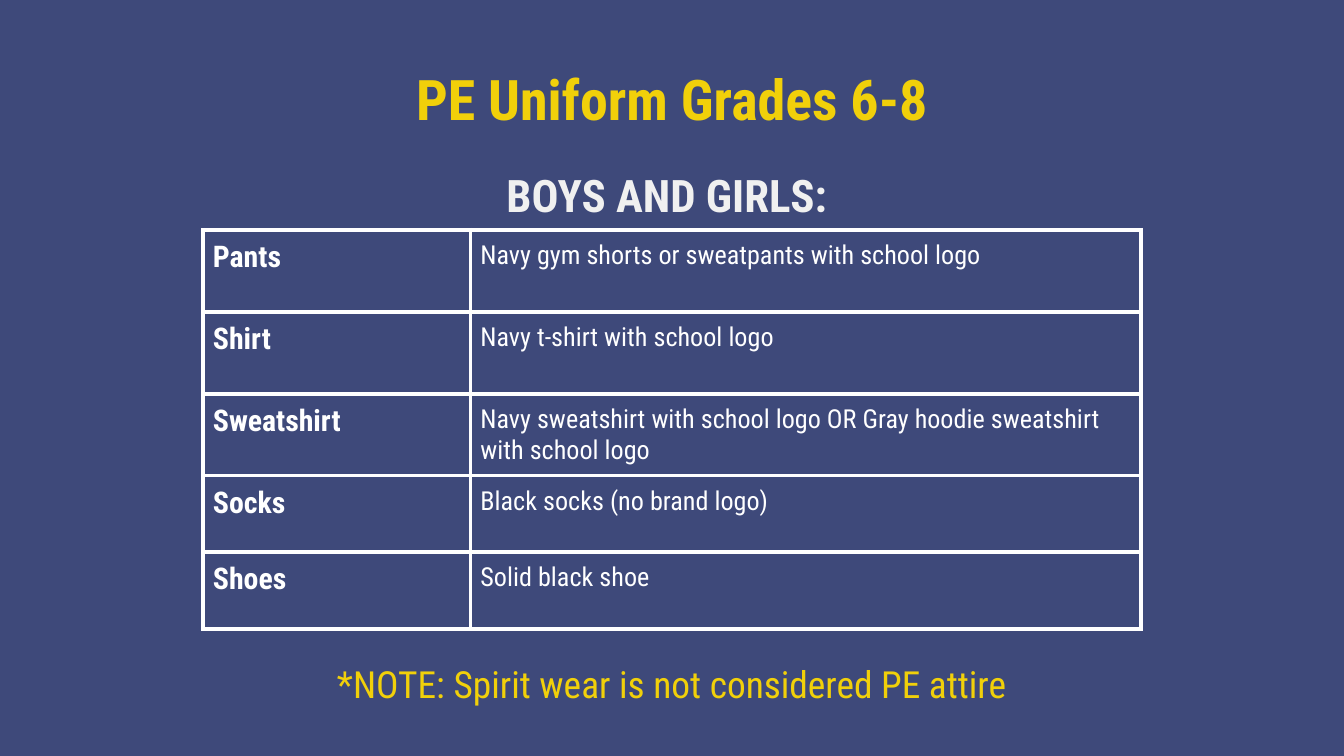
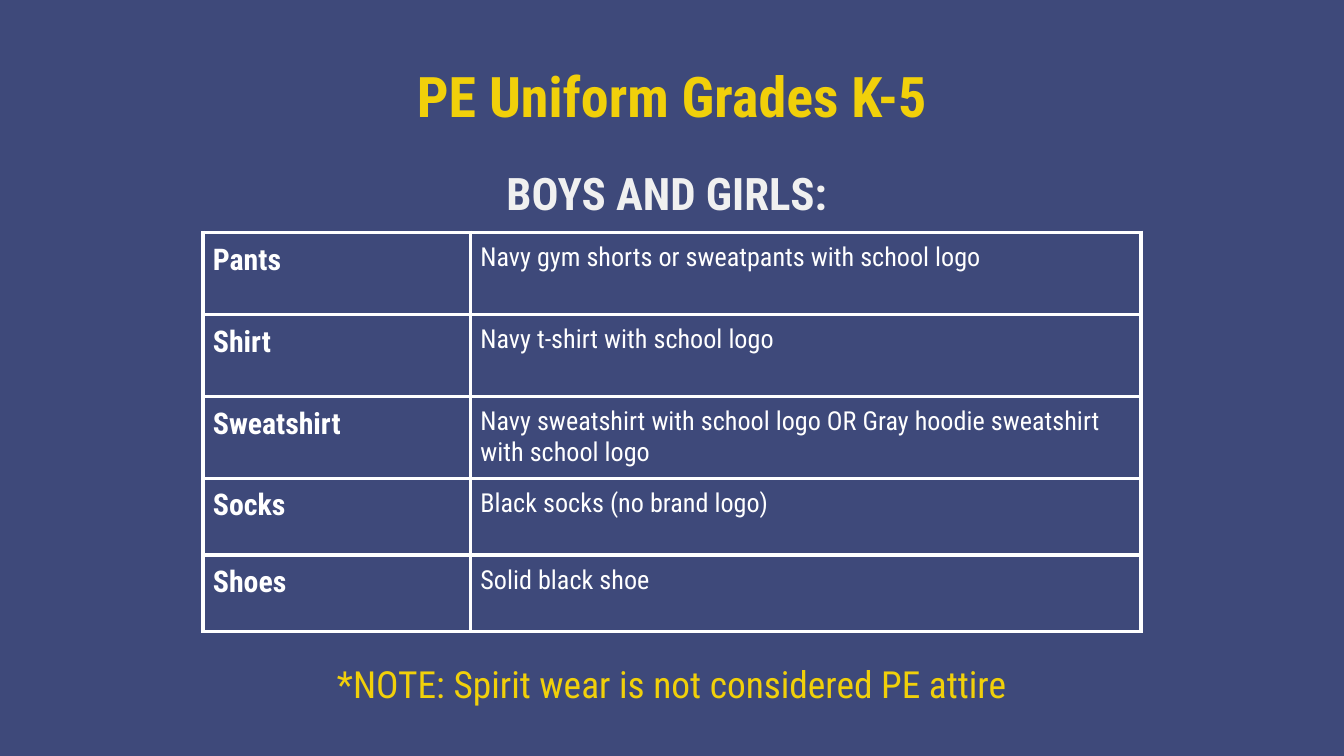
import dataclasses
import typing

import lxml.etree
import pptx
import pptx.dml.color
import pptx.enum.text
import pptx.oxml.ns
import pptx.slide
import pptx.text.text
import pptx.util

COLORS = {"navy": "3E497A", "gold": "F1D00A", "light": "F0F0F0", "white": "FFFFFF"}
FONT = "Roboto Condensed"
SLIDE_WIDTH = pptx.util.Inches(10)
SLIDE_HEIGHT = pptx.util.Inches(5.625)
GRID_COLUMNS = 100  # square grid: rows are as tall as columns are wide
BORDER = pptx.util.Pt(2.25)
TEXT_INSET = 1
CELL_INSET = 0.75

TABLE_LEFT = 15.1
TABLE_COLUMNS = (19.9, 49.9)
TABLE_ROWS = (6.1, 6.1, 6.1, 5.7, 5.7)
UNIFORM = (
    ("Pants", "Navy gym shorts or sweatpants with school logo"),
    ("Shirt", "Navy t-shirt with school logo"),
    ("Sweatshirt", "Navy sweatshirt with school logo OR Gray hoodie sweatshirt with school logo"),
    ("Socks", "Black socks (no brand logo)"),
    ("Shoes", "Solid black shoe"),
)


@dataclasses.dataclass(frozen=True)
class TextStyle:
    size: float
    color: str
    bold: bool = False
    centered: bool = True
    line_spacing: float = 1.0
    space_after: float = 0


@dataclasses.dataclass(frozen=True)
class Area:
    """A rectangle in grid units."""
    left: float
    top: float
    width: float
    height: float


@dataclasses.dataclass(frozen=True)
class UniformPage:
    title: str
    heading_top: float
    table_top: float


TITLE = TextStyle(30, "gold", bold=True)
SUBTITLE = TextStyle(24, "light", bold=True, line_spacing=1.15, space_after=12)
NOTE = TextStyle(20, "gold")
GARMENT = TextStyle(16, "white", bold=True, centered=False)
DETAIL = TextStyle(14, "white", centered=False)

PAGES = (
    UniformPage("PE Uniform Grades 6-8", heading_top=3.8, table_top=17.1),
    UniformPage("PE Uniform Grades K-5", heading_top=3.6, table_top=17.3),
)


def grid(units: float) -> pptx.util.Emu:
    return pptx.util.Emu(round(SLIDE_WIDTH * units / GRID_COLUMNS))


def place(area: Area) -> tuple[pptx.util.Emu, ...]:
    return tuple(grid(units) for units in dataclasses.astuple(area))


def write(frame: pptx.text.text.TextFrame, text: str, style: TextStyle) -> None:
    paragraph = frame.paragraphs[0]
    align = pptx.enum.text.PP_ALIGN
    paragraph.alignment = align.CENTER if style.centered else align.LEFT
    paragraph.line_spacing = style.line_spacing
    paragraph.space_before = pptx.util.Pt(0)
    paragraph.space_after = pptx.util.Pt(style.space_after)
    run = paragraph.add_run()
    run.text = text
    run.font.name = FONT
    run.font.size = pptx.util.Pt(style.size)
    run.font.bold = style.bold
    run.font.color.rgb = pptx.dml.color.RGBColor.from_string(COLORS[style.color])


def fill_box(shape: typing.Any, text: str, style: TextStyle) -> None:
    frame = shape.text_frame
    frame.word_wrap = True
    frame.auto_size = pptx.enum.text.MSO_AUTO_SIZE.NONE
    frame.vertical_anchor = pptx.enum.text.MSO_ANCHOR.TOP
    frame.margin_left = frame.margin_right = grid(TEXT_INSET)
    frame.margin_top = frame.margin_bottom = grid(TEXT_INSET)
    write(frame, text, style)


def add_text(slide: pptx.slide.Slide, area: Area, text: str, style: TextStyle) -> None:
    fill_box(slide.shapes.add_textbox(*place(area)), text, style)


def add_title(slide: pptx.slide.Slide, area: Area, text: str) -> None:
    title = slide.shapes.title
    title.left, title.top, title.width, title.height = place(area)
    fill_box(title, text, TITLE)


def add_borders(cell: typing.Any) -> None:
    qn = pptx.oxml.ns.qn
    properties = cell._tc.get_or_add_tcPr()
    for side in ("lnL", "lnR", "lnT", "lnB"):
        line = lxml.etree.SubElement(properties, qn(f"a:{side}"), w=str(int(BORDER)))
        fill = lxml.etree.SubElement(line, qn("a:solidFill"))
        lxml.etree.SubElement(fill, qn("a:srgbClr"), val=COLORS["white"])


def add_uniform_table(slide: pptx.slide.Slide, top: float) -> None:
    area = Area(TABLE_LEFT, top, sum(TABLE_COLUMNS), sum(TABLE_ROWS))
    table = slide.shapes.add_table(len(UNIFORM), len(TABLE_COLUMNS), *place(area)).table
    table.first_row = table.horz_banding = False
    for column, width in zip(table.columns, TABLE_COLUMNS):
        column.width = grid(width)
    for row, height, texts in zip(table.rows, TABLE_ROWS, UNIFORM):
        row.height = grid(height)
        for cell, text, style in zip(row.cells, texts, (GARMENT, DETAIL)):
            add_borders(cell)
            cell.fill.background()
            cell.margin_left = cell.margin_right = grid(CELL_INSET)
            cell.margin_top = cell.margin_bottom = grid(CELL_INSET)
            write(cell.text_frame, text, style)


def add_page(presentation: typing.Any, page: UniformPage) -> None:
    slide = presentation.slides.add_slide(presentation.slide_layouts.get_by_name("Title Only"))
    add_title(slide, Area(0, page.heading_top, GRID_COLUMNS, 6.3), page.title)
    add_text(slide, Area(24.7, page.heading_top + 7.1, 50.6, 4.7), "BOYS AND GIRLS: ", SUBTITLE)
    add_uniform_table(slide, page.table_top)
    add_text(slide, Area(TABLE_LEFT, 48.2, sum(TABLE_COLUMNS), 5.4),
             "*NOTE: Spirit wear is not considered PE attire", NOTE)


def main() -> None:
    presentation = pptx.Presentation()
    presentation.slide_width = SLIDE_WIDTH
    presentation.slide_height = SLIDE_HEIGHT
    background = presentation.slide_master.background.fill
    background.solid()
    background.fore_color.rgb = pptx.dml.color.RGBColor.from_string(COLORS["navy"])
    for page in PAGES:
        add_page(presentation, page)
    presentation.save("out.pptx")


if __name__ == "__main__":
    main()
